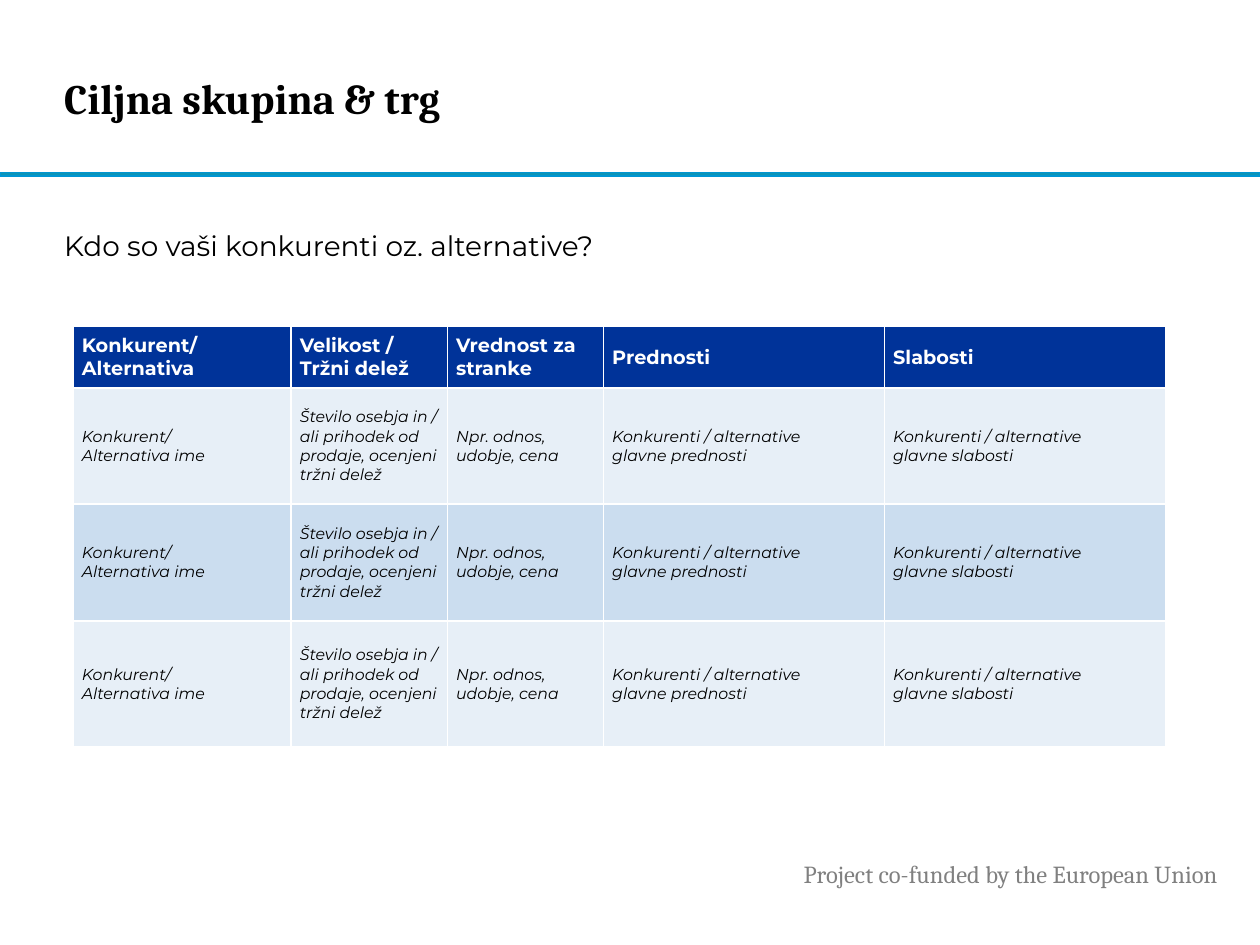
"""Build the competitor table slide on target group and market."""
from pptx import Presentation
from pptx.dml.color import RGBColor
from pptx.enum.shapes import MSO_SHAPE
from pptx.enum.text import MSO_ANCHOR as Anchor, MSO_AUTO_SIZE as Fit, PP_ALIGN as Align
from pptx.oxml.ns import qn
from pptx.util import Inches, Pt
from lxml.etree import SubElement

TITLE = "Ciljna skupina & trg"
QUERY = "Kdo so vaši konkurenti oz. alternative?"
FUNDING = "Project co-funded by the European Union"
HEADS = ["Konkurent/\nAlternativa", "Velikost /\nTržni delež", "Vrednost za stranke",
         "Prednosti", "Slabosti"]
HINTS = ["Konkurent/\nAlternativa ime",
         "Število osebja in / ali prihodek od prodaje, ocenjeni tržni delež",
         "Npr. odnos, udobje, cena",
         "Konkurenti / alternative\nglavne prednosti",
         "Konkurenti / alternative\nglavne slabosti"]
ROWS = [HEADS] + [HINTS] * 3
WIDTHS = [1.73, 1.24, 1.24, 2.23, 2.23]
HEIGHTS = [0.49, 0.92, 0.93, 1]

BLACK = RGBColor(0x00, 0x00, 0x00)
WHITE = RGBColor(0xFF, 0xFF, 0xFF)
GRAY = RGBColor(0x80, 0x80, 0x80)
NAVY = RGBColor(0x00, 0x33, 0x99)
PALE = RGBColor(0xE7, 0xEF, 0xF7)
SKY = RGBColor(0xCB, 0xDD, 0xEF)
TEAL = RGBColor(0x0C, 0x94, 0xB7)
BLUE = RGBColor(0x00, 0x96, 0xD3)
FILLS = [NAVY, PALE, SKY, PALE]
SERIF, SANS = "Cambria", "Montserrat"


def write(frame, text, face, size, color, bold=False, italic=False):
    frame.text = text
    for para in frame.paragraphs:
        para.alignment = Align.LEFT
        for run in para.runs:
            font = run.font
            font.name, font.size = face, Pt(size)
            font.bold, font.italic = bold, italic
            font.color.rgb = color


def place(shape, left, top, width, height):
    shape.left, shape.top = Inches(left), Inches(top)
    shape.width, shape.height = Inches(width), Inches(height)


def inset(frame, side, edge):
    frame.margin_left = frame.margin_right = Inches(side)
    frame.margin_top = frame.margin_bottom = Inches(edge)


def border(cell):
    props = cell._tc.get_or_add_tcPr()
    for side in ("a:lnL", "a:lnR", "a:lnT", "a:lnB"):
        line = SubElement(props, qn(side), w=str(Pt(1)))
        fill = SubElement(line, qn("a:solidFill"))
        SubElement(fill, qn("a:srgbClr"), val=str(WHITE))


def add_grid(slide):
    frame = slide.shapes.add_table(len(ROWS), len(WIDTHS), Inches(0.58), Inches(2.59),
                                   Inches(sum(WIDTHS)), Inches(sum(HEIGHTS)))
    table = frame.table
    for col, width in zip(table.columns, WIDTHS):
        col.width = Inches(width)
    for r, (texts, height, fill) in enumerate(zip(ROWS, HEIGHTS, FILLS)):
        table.rows[r].height = Inches(height)
        head = r == 0
        for c, text in enumerate(texts):
            cell = table.cell(r, c)
            write(cell.text_frame, text, SANS, 11 if head else 9,
                  WHITE if head else BLACK, head, not head)
            cell.vertical_anchor = Anchor.MIDDLE
            inset(cell, 0.07, 0)
            border(cell)
            cell.fill.solid()
            cell.fill.fore_color.rgb = fill


def main():
    deck = Presentation()
    deck.slide_width, deck.slide_height = Inches(10), Inches(7.5)
    slide = deck.slides.add_slide(deck.slide_layouts[1])
    title, body = slide.placeholders

    rule = slide.shapes.add_shape(MSO_SHAPE.RECTANGLE, 0, Inches(1.37),
                                  Inches(10), Inches(0.03))
    rule.shadow.inherit = False
    rule.fill.solid()
    rule.fill.fore_color.rgb = TEAL
    rule.line.color.rgb = BLUE
    rule.line.width = Pt(1)

    note = slide.shapes.add_textbox(Inches(6.28), Inches(6.77), Inches(3.66), Inches(0.34))
    note.text_frame.word_wrap = True
    write(note.text_frame, FUNDING, SERIF, 14, GRAY)

    place(body, 0.51, 1.76, 8.49, 5.06)
    frame = body.text_frame
    frame.auto_size = Fit.NONE
    inset(frame, 0, 0.05)
    write(frame, QUERY, SANS, 16, BLACK)
    para = frame.paragraphs[0]
    props = para._p.get_or_add_pPr()
    props.set("marL", "0")
    props.set("indent", "0")
    SubElement(props, qn("a:buNone"))
    para.space_before, para.space_after = Pt(0), Pt(6)

    place(title, 0.51, 0.18, 7.27, 1.19)
    frame = title.text_frame
    frame.auto_size = Fit.NONE
    frame.vertical_anchor = Anchor.MIDDLE
    inset(frame, 0, 0)
    write(frame, TITLE, SERIF, 24, BLACK, True)

    add_grid(slide)
    deck.save("out.pptx")


if __name__ == "__main__":
    main()
